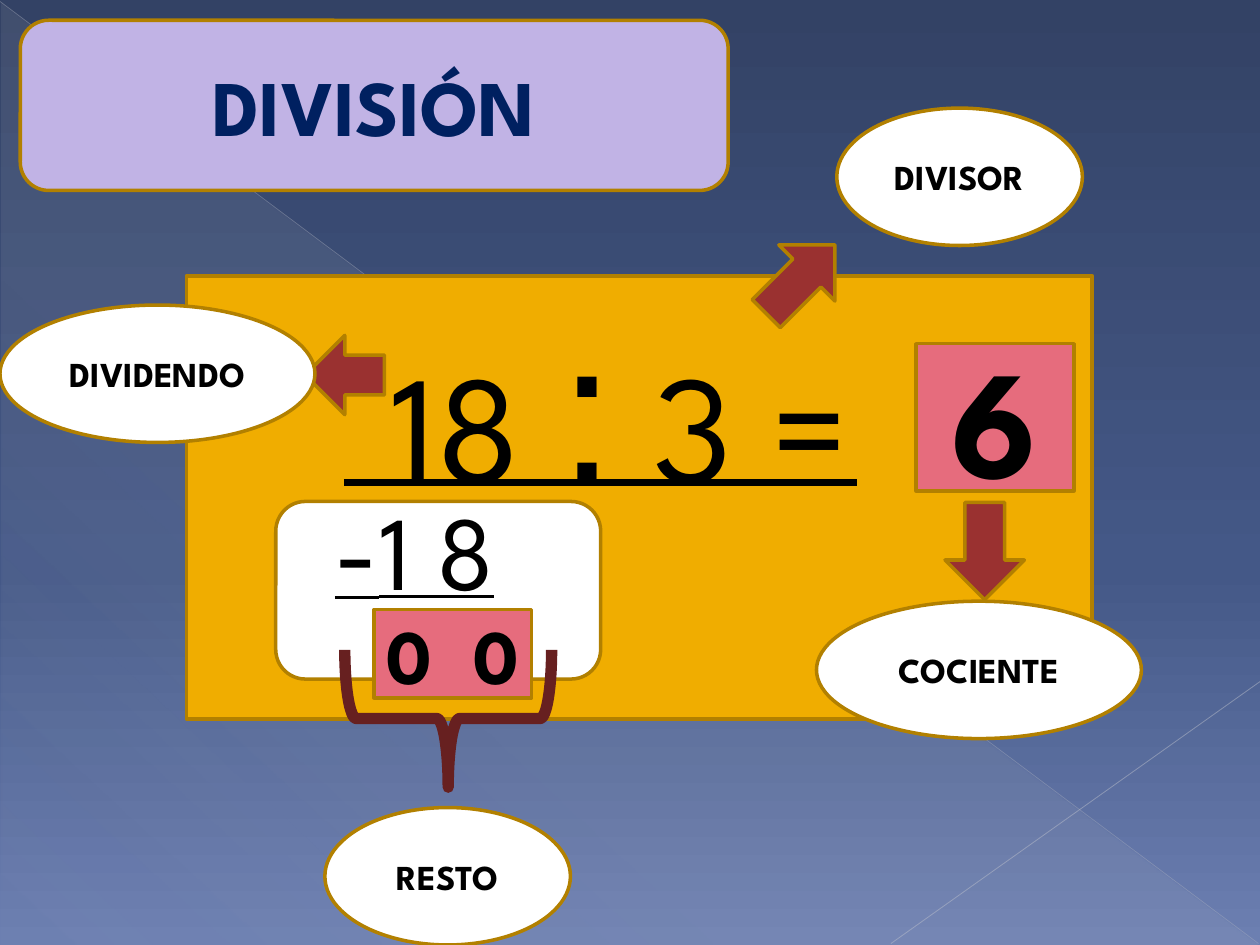
from dataclasses import dataclass

from lxml.etree import SubElement
from pptx import Presentation
from pptx.dml.color import RGBColor
from pptx.enum.shapes import MSO_CONNECTOR, MSO_SHAPE
from pptx.enum.text import MSO_ANCHOR, PP_ALIGN
from pptx.oxml.ns import qn
from pptx.util import Cm, Pt

FONT = "League Spartan"
COLORS = {
    "gold": "F0AD00", "edge": "B28000", "white": "FFFFFF", "black": "000000",
    "red": "9A3130", "brace": "672020", "pink": "E66C7D", "lilac": "C1B3E5",
    "navy": "002060", "haze": "D4D4D6", "ray": "B9BDC8", "short_ray": "C1C4CE",
    "sky_top": "334265", "sky_middle": "445887", "sky_bottom": "6C7FB1",
}


@dataclass
class Part:
    """A filled, outlined shape; lengths in centimetres."""
    kind: MSO_SHAPE
    left: float
    top: float
    width: float
    height: float
    fill: str = "white"
    text: str = ""
    size: float = 20
    rotation: float = 0


@dataclass
class Line:
    start: tuple[float, float]
    end: tuple[float, float]
    color: str
    width: float
    opacity: int = 100


def color(name: str) -> RGBColor:
    return RGBColor.from_string(COLORS[name])


def set_gradient(element, stops: list[tuple[int, str, int]], angle: int) -> None:
    """Fill the element's gradient with (position, colour, opacity) stops."""
    gradient = element.find(".//" + qn("a:gradFill"))
    for child in list(gradient):
        gradient.remove(child)
    stop_list = SubElement(gradient, qn("a:gsLst"))
    for position, name, opacity in stops:
        stop = SubElement(stop_list, qn("a:gs"), pos=str(position * 1000))
        tint = SubElement(stop, qn("a:srgbClr"), val=COLORS[name])
        SubElement(tint, qn("a:alpha"), val=str(opacity * 1000))
    SubElement(gradient, qn("a:lin"), ang=str(angle * 60000), scaled="0")


def style_font(font, size: float, name: str = "black", bold: bool = False) -> None:
    font.name, font.size, font.bold = FONT, Pt(size), bold
    font.color.rgb = color(name)


def draw_line(page, line: Line) -> None:
    ends = [Cm(value) for value in (*line.start, *line.end)]
    connector = page.shapes.add_connector(MSO_CONNECTOR.STRAIGHT, *ends)
    connector.line.color.rgb = color(line.color)
    connector.line.width = Pt(line.width)
    properties = connector._element.spPr
    if line.opacity < 100:
        tint = properties.find(".//" + qn("a:srgbClr"))
        SubElement(tint, qn("a:alpha"), val=str(line.opacity * 1000))
    SubElement(properties, qn("a:effectLst"))


def draw_part(page, part: Part):
    frame = [Cm(value) for value in (part.left, part.top, part.width, part.height)]
    shape = page.shapes.add_shape(part.kind, *frame)
    shape.shadow.inherit = False
    shape.rotation = part.rotation
    shape.fill.solid()
    shape.fill.fore_color.rgb = color(part.fill)
    shape.line.color.rgb = color("edge")
    shape.line.width = Pt(2)
    box = shape.text_frame
    box.word_wrap = True
    box.vertical_anchor = MSO_ANCHOR.MIDDLE
    if part.text:
        paragraph = box.paragraphs[0]
        paragraph.text = part.text
        paragraph.alignment = PP_ALIGN.CENTER
        style_font(paragraph.font, part.size, bold=True)
    return shape


def label(text: str, left: float, top: float, width: float) -> Part:
    return Part(MSO_SHAPE.OVAL, left, top, width, 2.77, text=text)


def arrow(left: float, top: float, width: float, rotation: float) -> Part:
    return Part(MSO_SHAPE.RIGHT_ARROW, left, top, width, 1.6, "red", rotation=rotation)


def draw_background(page) -> None:
    page.background.fill.gradient()
    set_gradient(page._element, [(0, "sky_top", 100), (60, "sky_middle", 100),
                                 (100, "sky_bottom", 100)], 90)
    haze = draw_part(page, Part(MSO_SHAPE.RIGHT_TRIANGLE, 0.03, 0.05, 25.35, 19))
    haze.line.fill.background()
    haze.fill.gradient()
    set_gradient(haze._element, [(0, "haze", 10), (70, "haze", 8), (100, "haze", 1)], 133)
    draw_line(page, Line((0, 0.03), (25.37, 19.02), "ray", 0.39, 35))
    draw_line(page, Line((25.4, 13.74), (17.96, 19.02), "short_ray", 0.47, 45))


def draw_operation(page) -> None:
    board = draw_part(page, Part(MSO_SHAPE.RECTANGLE, 3.76, 5.56, 18.26, 8.94, "gold"))
    board.text_frame.margin_bottom = Cm(3.95)
    paragraph = board.text_frame.paragraphs[0]
    paragraph.alignment = PP_ALIGN.CENTER
    style_font(paragraph.font, 88)
    for text in ("18 ", ":", " 3 = "):
        span = paragraph.add_run()
        span.text = text
        if text == ":":
            span.font.name, span.font.size = "Arial", Pt(115)
    draw_line(page, Line((6.93, 9.73), (17.27, 9.73), "black", 4))


def draw_subtraction(page) -> None:
    card = draw_part(page, Part(MSO_SHAPE.ROUNDED_RECTANGLE, 5.56, 10.11, 6.55, 3.58))
    box = card.text_frame
    box.margin_left, box.margin_top, box.margin_bottom = Cm(1.02), Cm(0), Cm(1.87)
    paragraph = box.paragraphs[0]
    paragraph.alignment = PP_ALIGN.LEFT
    style_font(paragraph.font, 60)
    for text, size in (("-", 66), ("1 8", 60)):
        span = paragraph.add_run()
        span.text = text
        span.font.size = Pt(size)
        span.font.underline = True


def draw_brace(page) -> None:
    brace = draw_part(page, Part(MSO_SHAPE.RIGHT_BRACE, 7.65, 12.4, 2.77, 4.17, rotation=90))
    brace.fill.background()
    brace.line.color.rgb = color("brace")
    brace.line.width = Pt(6.5)


def draw_title(page) -> None:
    panel = draw_part(page, Part(MSO_SHAPE.ROUNDED_RECTANGLE, 0.41, 0.41, 14.27, 3.43, "lilac"))
    title = page.shapes.title
    title.left, title.top = panel.left, panel.top
    title.width, title.height = panel.width, panel.height
    title.text_frame.vertical_anchor = MSO_ANCHOR.MIDDLE
    paragraph = title.text_frame.paragraphs[0]
    paragraph.text = "DIVISIÓN"
    paragraph.alignment = PP_ALIGN.CENTER
    style_font(paragraph.font, 45, "navy", bold=True)
    page.shapes._spTree.append(title._element)  # in front of its panel


def main() -> None:
    deck = Presentation()
    deck.slide_width, deck.slide_height = Cm(25.4), Cm(19.05)
    page = deck.slides.add_slide(deck.slide_layouts[5])
    draw_background(page)
    draw_operation(page)
    # Dividend and divisor
    for part in (arrow(6.15, 6.76, 1.6, 180), label("DIVIDENDO", 0, 6.15, 6.35),
                 label("DIVISOR", 16.87, 2.18, 4.95), arrow(15.16, 4.83, 1.96, 315)):
        draw_part(page, part)
    draw_subtraction(page)
    draw_brace(page)
    # Remainder and quotient
    for part in (label("RESTO", 6.55, 16.28, 4.95),
                 Part(MSO_SHAPE.RECTANGLE, 7.54, 12.29, 3.18, 1.78, "pink", "0  0", 44),
                 Part(MSO_SHAPE.RECTANGLE, 18.47, 6.93, 3.18, 2.97, "pink", "6", 88),
                 arrow(18.87, 10.31, 1.96, 90), label("COCIENTE", 16.46, 12.12, 6.55)):
        draw_part(page, part)
    draw_title(page)
    deck.save("out.pptx")


if __name__ == "__main__":
    main()
